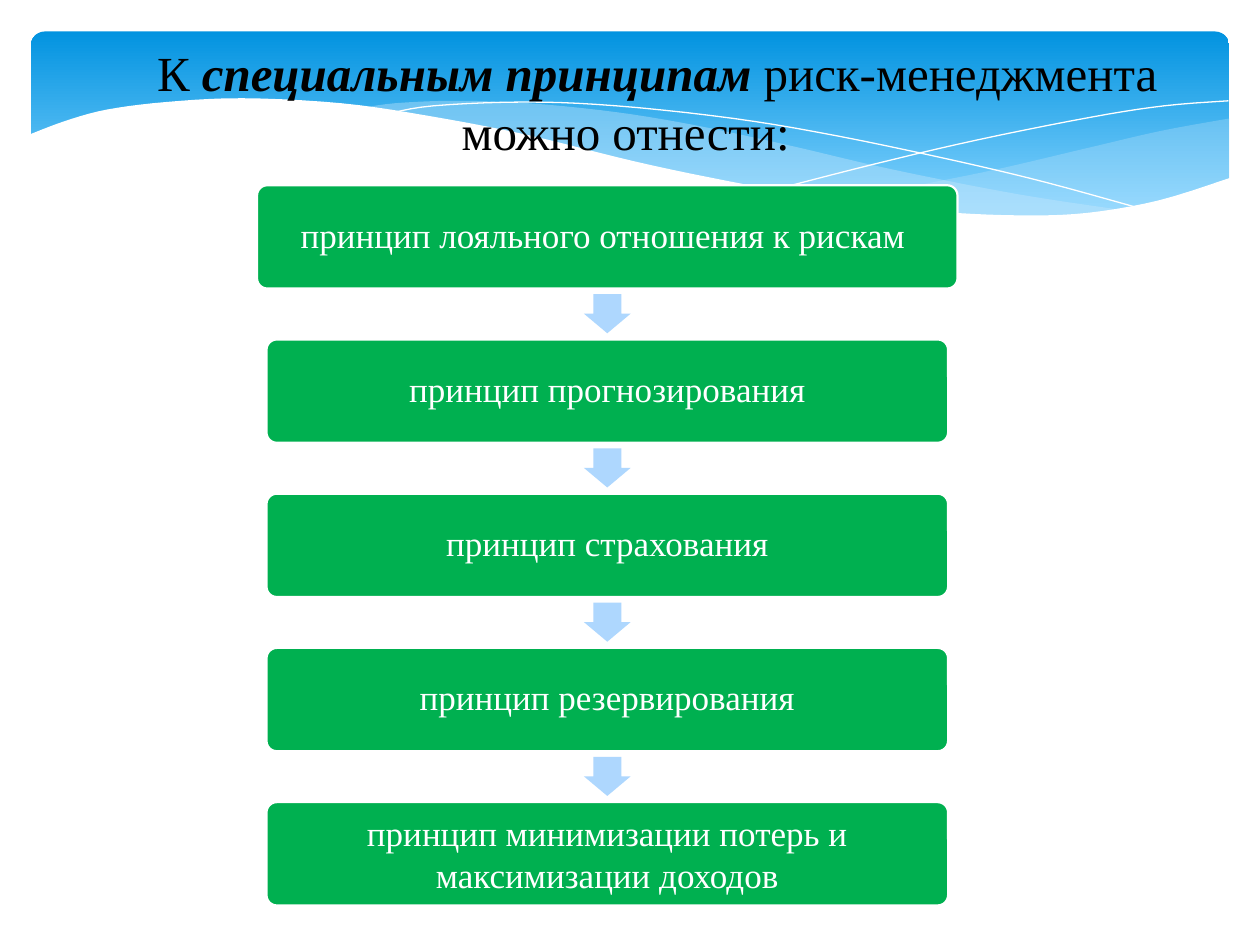
from pptx import Presentation
from pptx.dml.color import RGBColor
from pptx.enum.shapes import MSO_SHAPE as Geo
from pptx.enum.text import MSO_ANCHOR as Anchor, MSO_AUTO_SIZE as Fit, PP_ALIGN as Align
from pptx.util import Inches, Pt
from pptx.oxml.ns import qn
from lxml.etree import SubElement as Sub

FONT = "Times New Roman"
GREEN, PALE, WHITE, BLACK, MIST = "00B050", "AED7FE", "FFFFFF", "000000", "C6E7FC"


def hue(code):
    return RGBColor.from_string(code)


def bend(keys, steps=5):
    ends = [keys[0], *keys, keys[-1]]
    out = [keys[0]]
    for a, b, c, d in zip(ends, ends[1:], ends[2:], ends[3:]):
        for n in range(1, steps + 1):
            t = n / steps
            out.append(tuple(
                (2 * q + (r - p) * t + (2 * p - 5 * q + 4 * r - s) * t ** 2
                 + (3 * q - p - 3 * r + s) * t ** 3) / 2
                for p, q, r, s in zip(a, b, c, d)))
    return out


class Deck:
    def __init__(self, cols=100):
        self.prs = Presentation()
        self.prs.slide_width, self.prs.slide_height = Inches(10), Inches(7.5)
        self.unit = self.prs.slide_width / cols
        self.slide = self.prs.slides.add_slide(self.prs.slide_layouts[5])
        self.shapes = self.slide.shapes

    def size(self, *cells):
        return [round(cell * self.unit) for cell in cells]

    def block(self, geo, mid, top, wide, high, adj, fill=None, edge=None):
        shape = self.shapes.add_shape(geo, *self.size(mid - wide / 2, top, wide, high))
        for n, part in enumerate(adj):
            shape.adjustments[n] = part
        self.paint(shape, fill, edge, 1.25)
        return shape

    def paint(self, shape, fill, edge, width):
        shape.shadow.inherit = False
        if fill:
            shape.fill.solid()
            shape.fill.fore_color.rgb = hue(fill)
        else:
            shape.fill.background()
        if edge:
            shape.line.color.rgb = hue(edge)
            shape.line.width = Pt(width)
        else:
            shape.line.fill.background()

    def panel(self, mid, top, wide, high, stops):
        shape = self.block(Geo.ROUNDED_RECTANGLE, mid, top, wide, high, [0.071])
        shape.fill.gradient()
        shape.fill.gradient_angle = 270
        for stop, (place, code) in zip(shape.fill.gradient_stops, stops):
            stop.position, stop.color.rgb = place, hue(code)

    def wave(self, *edges, fill=None, edge=None, alpha=None):
        dots = [self.size(*dot) for keys in edges for dot in bend(keys)]
        pen = self.shapes.build_freeform(*dots[0], scale=1.0)
        pen.add_line_segments(dots[1:], close=bool(fill))
        shape = pen.convert_to_shape()
        self.paint(shape, fill, edge, 0)
        if alpha:
            tint = shape.element.spPr.find(qn("a:solidFill"))[0]
            Sub(tint, qn("a:alpha"), val=str(alpha * 1000))

    def step(self, text, mid, top, wide, high, lead):
        shape = self.block(Geo.ROUNDED_RECTANGLE, mid, top, wide, high, [0.1], GREEN, WHITE)
        frame = shape.text_frame
        frame.word_wrap, frame.vertical_anchor = True, Anchor.MIDDLE
        frame.margin_top = frame.margin_bottom = Inches(0.08)
        para = frame.paragraphs[0]
        para.text, para.line_spacing = text, lead
        self.style(para, 20, WHITE)

    def arrow(self, mid, top, wide, high):
        self.block(Geo.DOWN_ARROW, mid, top, wide, high, [0.6, 0.5], PALE)

    def style(self, para, points, code):
        para.alignment = Align.CENTER
        font = para.font
        font.name, font.size, font.color.rgb = FONT, Pt(points), hue(code)

    def title(self, parts, *box):
        head = self.shapes.title
        head.left, head.top, head.width, head.height = self.size(*box)
        frame = head.text_frame
        frame.word_wrap, frame.auto_size = True, Fit.NONE
        frame.vertical_anchor = Anchor.TOP
        para = frame.paragraphs[0]
        for text, strong in parts:
            run = para.add_run()
            run.text = text
            run.font.bold = run.font.italic = strong
        self.style(para, 28, BLACK)
        self.shapes.element.append(head.element)


def main():
    deck = Deck()
    deck.panel(50, 2.5, 95.1, 15.6, [(0, "0293E0"), (0.9, "83D3FE")])
    deck.wave([(97.6, 9.4), (92.1, 10.4), (86.1, 11.8), (77.9, 13.7), (66.1, 16)],
              [(66.1, 16), (71.9, 16.7), (78.1, 17.2), (84.4, 17.1), (89.7, 16.5),
               (94.2, 15.4), (97.6, 14.1)], fill=MIST, alpha=29)
    deck.wave([(89.3, 16.7), (80.7, 15.4), (70.6, 13.4), (62.9, 11.6), (55.5, 10),
               (48.9, 8.9), (42, 8.2), (36.1, 8), (31.3, 8.2), (28.6, 8.6)],
              [(28.6, 8.6), (36.2, 9.7), (44.9, 11.6), (56.6, 14.3), (65, 15.8),
               (73.6, 16.9), (80.7, 17.3), (85.7, 17.1), (89.3, 16.7)], fill=MIST, alpha=40)
    deck.wave([(30.9, 9), (34.4, 8.4), (41.6, 8.1), (48.9, 8.4), (58.2, 9.4),
               (66.5, 10.8), (76, 12.8), (83.1, 14.5), (90.7, 16.6)], edge=WHITE)
    deck.wave([(61.3, 15.1), (69.5, 13), (77.6, 11.1), (86.6, 9.3), (92.4, 8.4),
               (97.5, 8)], edge=WHITE)
    deck.wave([(97.7, 14.1), (92, 15.9), (86.3, 16.9), (80.9, 17.1), (74.4, 16.8),
               (66.8, 16), (57.9, 14.4), (50.3, 12.8), (41.8, 10.7), (34, 9.2),
               (27.1, 8.2), (19.3, 7.8), (13.2, 8.1), (8.5, 8.7), (5.2, 9.6), (2.3, 10.7)],
              [(2.3, 22.4), (97.7, 22.4)], fill=WHITE)

    steps = ["принцип лояльного отношения к рискам ", "принцип прогнозирования",
             "принцип страхования", "принцип резервирования",
             "принцип минимизации потерь и максимизации доходов"]
    mid, first, pitch, high = 48.2, 14.7, 12.24, 8.2
    last = len(steps) - 1
    for n, text in enumerate(steps):
        top = first + n * pitch
        deck.step(text, mid, top, 54.1 if n else 55.6, high, 1.0 if n == last else 0.9)
        if n < last:
            deck.arrow(mid, top + high + 0.45, 3.7, 3.1)

    deck.title([("\tК ", False), ("специальным принципам", True),
                (" риск-менеджмента можно отнести:", False)], 2.4, 2.9, 94.5, 10.4)
    deck.prs.save("out.pptx")


if __name__ == "__main__":
    main()
